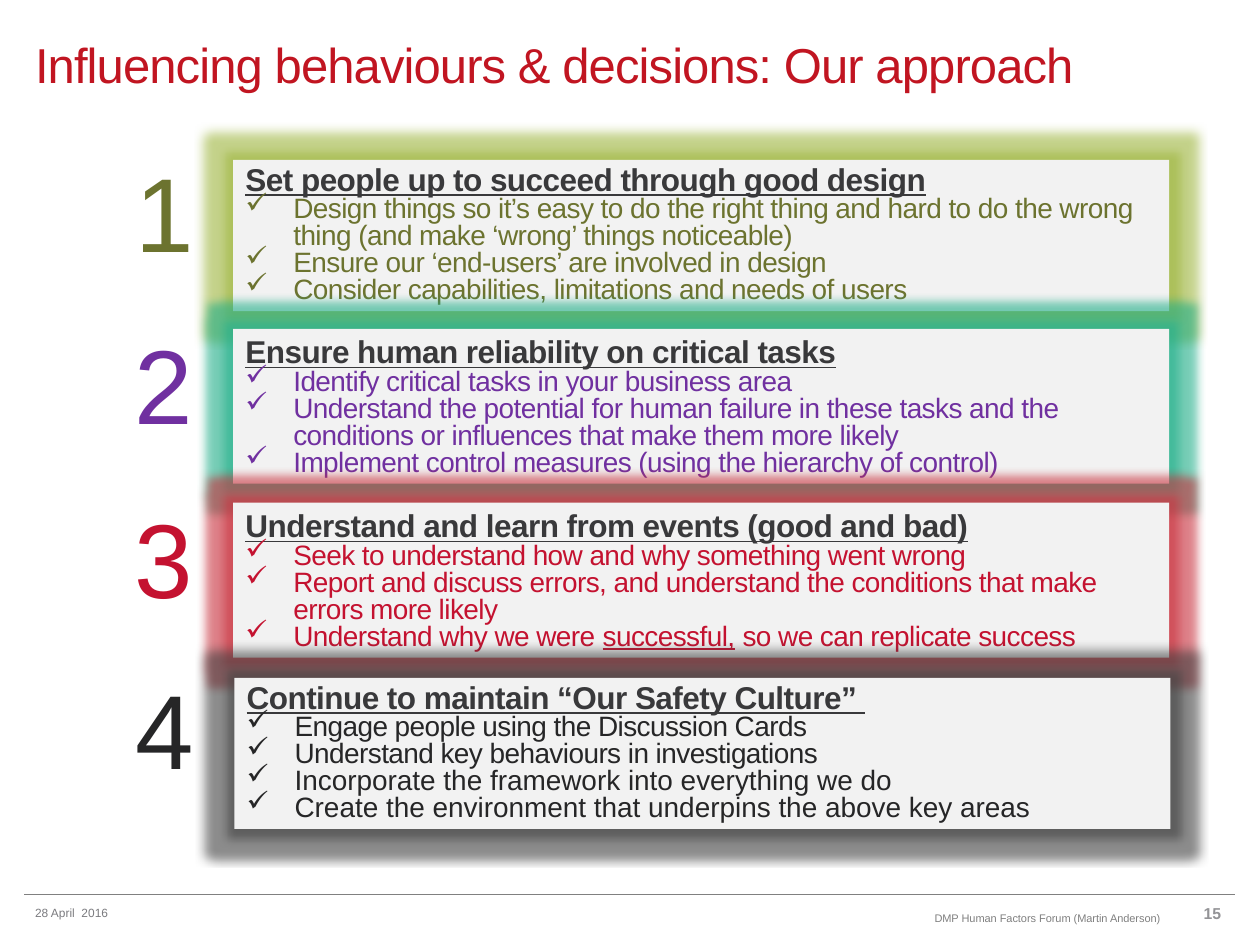
from dataclasses import dataclass

from lxml import etree
from pptx import Presentation
from pptx.dml.color import RGBColor
from pptx.enum.shapes import MSO_CONNECTOR, MSO_SHAPE
from pptx.enum.text import MSO_ANCHOR, MSO_AUTO_SIZE, PP_ALIGN
from pptx.oxml.ns import qn
from pptx.util import Inches, Pt

LINE = MSO_CONNECTOR.STRAIGHT
RECTANGLE = MSO_SHAPE.RECTANGLE
MIDDLE, BOTTOM = MSO_ANCHOR.MIDDLE, MSO_ANCHOR.BOTTOM
LEFT, RIGHT = PP_ALIGN.LEFT, PP_ALIGN.RIGHT
GROW = MSO_AUTO_SIZE.SHAPE_TO_FIT_TEXT


@dataclass(frozen=True)
class Theme:
    font: str = "Arial"
    title: str = "C11521"
    heading: str = "39393B"
    panel: str = "F2F2F2"
    rule: str = "808080"
    date: str = "7B7B7F"
    page_number: str = "939396"
    title_size: float = 28
    number_size: float = 60
    heading_size: float = 18
    bullet_size: float = 16
    page_number_size: float = 9
    date_size: float = 6.8
    footer_size: float = 6.3
    title_spacing: float = -0.5
    tight: float = -0.3
    leading: float = 0.8
    glow_radius: float = 11
    glow_alpha: int = 60


THEME = Theme()


@dataclass(frozen=True)
class Span:
    text: str
    underline: bool = False
    spacing: float = THEME.tight


@dataclass(frozen=True)
class Card:
    left: float
    top: float
    height: float
    number_left: float
    number_width: float
    color: str
    glow: str
    heading: str
    bullets: tuple[tuple[Span, ...], ...]


@dataclass(frozen=True)
class Label:
    text: str
    left: float
    top: float
    width: float
    height: float
    size: float
    color: str
    spacing: float = 0
    align: PP_ALIGN = LEFT
    anchor: MSO_ANCHOR = MIDDLE
    bold: bool = False


CARDS = (
    Card(1.85, 1.27, 1.2, 0.98, 0.73, "6C732F", "9DB53C",
         "Set people up to succeed through good design", (
             (Span("Design things so it’s easy to do the right thing and hard to do the wrong "
                   "thing (and make ‘wrong’ things noticeable)"),),
             (Span("Ensure our ‘end-users’ are involved in design"),),
             (Span("Consider capabilities, limitations and needs of users"),))),
    Card(1.85, 2.61, 1.23, 0.97, 0.73, "7030A0", "20AE88",
         "Ensure human reliability on critical tasks", (
             (Span("Identify critical tasks in your business area"),),
             (Span("Understand the potential for human failure in these tasks and the "
                   "conditions or influences that make them more likely"),),
             (Span("Implement control measures (using the hierarchy of control)"),))),
    Card(1.85, 3.99, 1.23, 0.97, 0.73, "C41230", "C8303C",
         "Understand and learn from events (good and bad)", (
             (Span("Seek to understand how and why something went wrong"),),
             (Span("Report and discuss errors, and understand the conditions that make "
                   "errors more likely"),),
             (Span("Understand why we were "), Span("successful,", underline=True),
              Span(" so we can replicate success")))),
    Card(1.86, 5.38, 1.2, 0.98, 0.67, "262627", "404040",
         "Continue to maintain “Our Safety Culture” ", (
             (Span("Engage people using the Discussion Cards"),),
             (Span("Understand key behaviours in investigations"),),
             (Span("Incorporate the framework into everything we do", spacing=0),),
             (Span("Create the environment that underpins the above key areas", spacing=0),))),
)
CARD_WIDTH = 7.43
NUMBER_HEIGHT = 0.91
NUMBER_RISE = 0.26
BULLET_INDENT = 0.38

LABELS = (
    Label("Influencing behaviours & decisions: Our approach", 0.18, 0.21, 8.83, 0.6,
          THEME.title_size, THEME.title, THEME.title_spacing),
    Label("28 April  2016", 0.18, 7.1, 1.46, 0.28, THEME.date_size, THEME.date),
    Label("DMP Human Factors Forum (Martin Anderson)", 5.77, 7.11, 3.54, 0.28,
          THEME.footer_size, THEME.rule, align=RIGHT, anchor=BOTTOM),
    Label("15", 9.44, 7.11, 0.35, 0.27, THEME.page_number_size, THEME.page_number,
          align=RIGHT, bold=True),
)


def add_spans(para, spans: tuple[Span, ...]) -> None:
    for item in spans:
        span = para.add_run()
        span.text = item.text
        if item.underline:
            span.font.underline = True
        if item.spacing:
            span.font._element.set("spc", str(round(item.spacing * 100)))


def style(para, size: float, color: str, bold: bool = False, underline: bool = False) -> None:
    font = para.font
    font.name = THEME.font
    font.size = Pt(size)
    font.bold = bold
    font.underline = underline
    font.color.rgb = RGBColor.from_string(color)


def add_bullet(para) -> None:
    properties = para._p.get_or_add_pPr()
    indent = Inches(BULLET_INDENT)
    properties.set("marL", str(indent))
    properties.set("indent", str(-indent))
    etree.SubElement(properties, qn("a:buChar")).set("char", "✓")


def add_glow(shape, color: str) -> None:
    effects = shape._element.spPr.find(qn("a:effectLst"))
    glow = etree.SubElement(effects, qn("a:glow"), rad=str(Pt(THEME.glow_radius)))
    tint = etree.SubElement(glow, qn("a:srgbClr"), val=color)
    etree.SubElement(tint, qn("a:alpha"), val=str(THEME.glow_alpha * 1000))


def draw_label(page, label: Label) -> None:
    box = page.shapes.add_textbox(Inches(label.left), Inches(label.top),
                                  Inches(label.width), Inches(label.height))
    frame = box.text_frame
    frame.word_wrap = True
    frame.vertical_anchor = label.anchor
    para = frame.paragraphs[0]
    para.alignment = label.align
    add_spans(para, (Span(label.text, spacing=label.spacing),))
    style(para, label.size, label.color, label.bold)


def draw_card(page, card: Card, number: int) -> None:
    panel = page.shapes.add_shape(RECTANGLE, Inches(card.left), Inches(card.top),
                                  Inches(CARD_WIDTH), Inches(card.height))
    panel.shadow.inherit = False
    panel.fill.solid()
    panel.fill.fore_color.rgb = RGBColor.from_string(THEME.panel)
    panel.line.fill.background()
    add_glow(panel, card.glow)
    frame = panel.text_frame
    frame.word_wrap = True
    frame.auto_size = GROW
    frame.vertical_anchor = BOTTOM
    heading = frame.paragraphs[0]
    heading.alignment = LEFT
    heading.line_spacing = THEME.leading
    add_spans(heading, (Span(card.heading),))
    style(heading, THEME.heading_size, THEME.heading, bold=True, underline=True)
    for spans in card.bullets:
        para = frame.add_paragraph()
        para.alignment = LEFT
        para.line_spacing = THEME.leading
        add_bullet(para)
        add_spans(para, spans)
        style(para, THEME.bullet_size, card.color)

    number_top = card.top + card.height - NUMBER_RISE - NUMBER_HEIGHT
    box = page.shapes.add_textbox(Inches(card.number_left), Inches(number_top),
                                  Inches(card.number_width), Inches(NUMBER_HEIGHT))
    box.text_frame.word_wrap = False
    box.text_frame.auto_size = GROW
    box.text_frame.vertical_anchor = BOTTOM
    para = box.text_frame.paragraphs[0]
    para.line_spacing = THEME.leading
    add_spans(para, (Span(str(number)),))
    style(para, THEME.number_size, card.color)


def draw_rule(page) -> None:
    rule = page.shapes.add_connector(LINE, Inches(9.8), Inches(7.1), Inches(0.19), Inches(7.1))
    rule.line.color.rgb = RGBColor.from_string(THEME.rule)
    rule.line.width = Pt(0.5)
    etree.SubElement(rule._element.spPr, qn("a:effectLst"))


def main() -> None:
    deck = Presentation()
    deck.slide_width, deck.slide_height = Inches(10), Inches(7.5)
    page = deck.slides.add_slide(deck.slide_layouts[6])
    draw_rule(page)
    for number, card in enumerate(CARDS, 1):
        draw_card(page, card, number)
    for label in LABELS:
        draw_label(page, label)
    deck.save("out.pptx")


if __name__ == "__main__":
    main()
